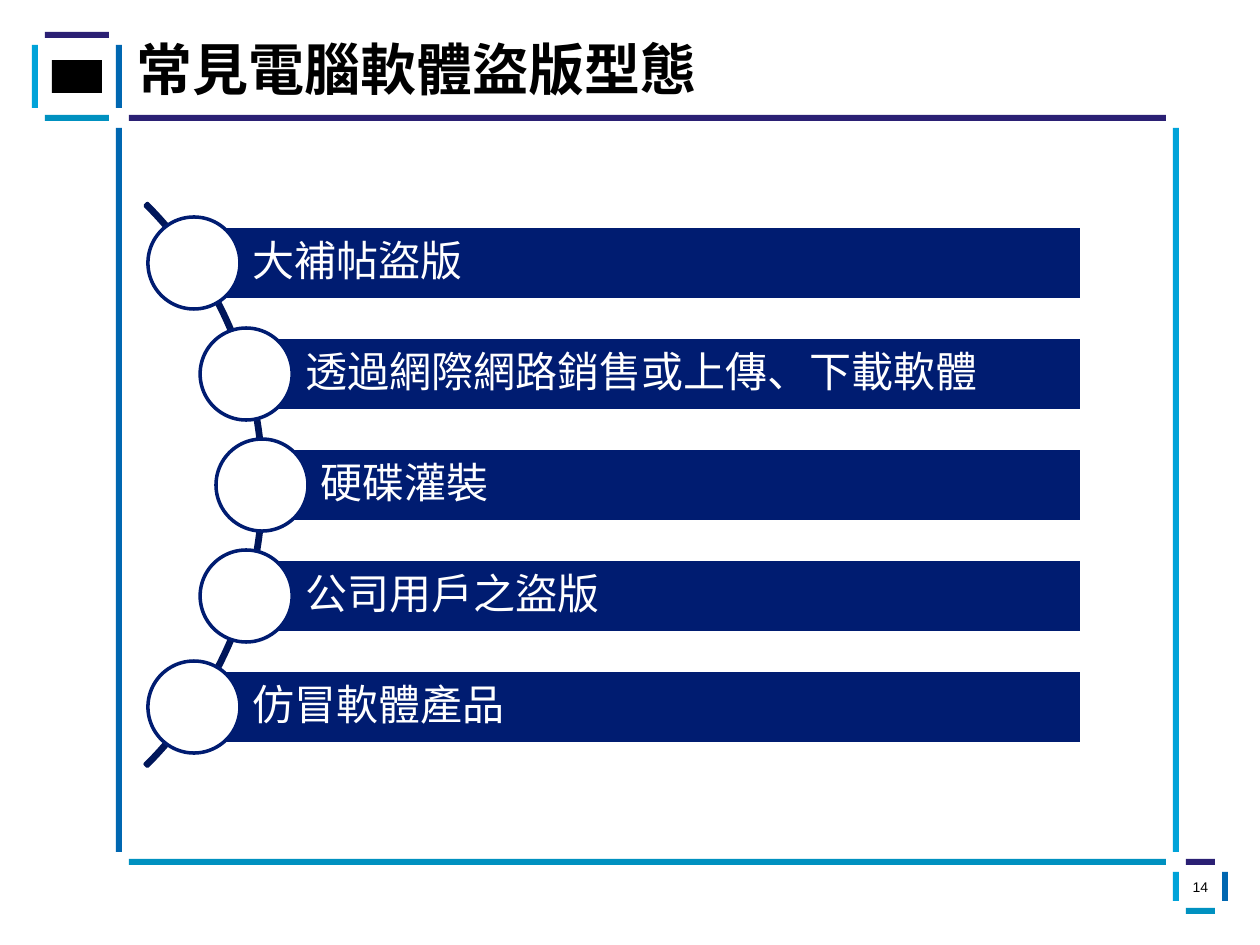
from math import sqrt

from lxml import etree
from pptx import Presentation
from pptx.dml.color import RGBColor
from pptx.enum.shapes import MSO_SHAPE
from pptx.enum.text import MSO_ANCHOR, PP_ALIGN
from pptx.oxml.ns import qn
from pptx.util import Pt

RECT, OVAL, BLOCK_ARC = MSO_SHAPE.RECTANGLE, MSO_SHAPE.OVAL, MSO_SHAPE.BLOCK_ARC
TOP, MIDDLE = MSO_ANCHOR.TOP, MSO_ANCHOR.MIDDLE
LEFT, CENTER = PP_ALIGN.LEFT, PP_ALIGN.CENTER
PX = 914400 / 126
CJK = "Noto Sans CJK SC"
COLORS = {
    "purple": "2B2074", "blue": "0067B1", "teal": "0091C0", "cyan": "00A3D9",
    "navy": "001C71", "arc": "00165A", "white": "FFFFFF", "black": "000000",
}
ITEMS = ["大補帖盜版", "透過網際網路銷售或上傳、下載軟體", "硬碟灌裝",
         "公司用戶之盜版", "仿冒軟體產品"]


def px(n):
    """Turn px into EMU."""
    return round(n * PX)


def rgb(name):
    """Look up a named colour."""
    return RGBColor.from_string(COLORS[name])


def add_shape(s, kind, box, fill, line=None):
    """Add a flat preset shape with an optional 2 pt outline."""
    sp = s.shapes.add_shape(kind, *map(px, box))
    sp.shadow.inherit = False
    sp.fill.solid()
    sp.fill.fore_color.rgb = rgb(fill)
    if line:
        sp.line.color.rgb = rgb(line)
        sp.line.width = Pt(2)
    else:
        sp.line.fill.background()
    return sp


def write(sp, text, size, color, font=CJK, bold=False, align=LEFT,
          anchor=MIDDLE, insets=(0, 0, 0, 0), spacing=0.9):
    """Write one formatted paragraph into a shape."""
    tf = sp.text_frame
    tf.text = text
    tf.word_wrap = True
    tf.vertical_anchor = anchor
    tf.margin_left, tf.margin_top, tf.margin_right, tf.margin_bottom = map(px, insets)
    p = tf.paragraphs[0]
    p.alignment = align
    p.line_spacing = spacing
    r = p.runs[0]
    r.font.size, r.font.bold, r.font.name = Pt(size), bold, font
    r.font.color.rgb = rgb(color)
    etree.SubElement(r.font._element, qn("a:ea")).set("typeface", font)


def add_frame(s, box, top, right, bottom, left):
    """Draw four bars round a box, with open corners."""
    x, y, w, h = box
    bar, inset = 6, 13
    across, down = w - 2 * inset, h - 2 * inset
    add_shape(s, RECT, (x + inset, y, across, bar), top)
    add_shape(s, RECT, (x + w - bar, y + inset, bar, down), right)
    add_shape(s, RECT, (x + inset, y + h - bar, across, bar), bottom)
    add_shape(s, RECT, (x, y + inset, bar, down), left)


def add_logo(s, box):
    """Draw the framed emblem as one plain block."""
    x, y, w, h = box
    add_frame(s, box, "purple", "blue", "teal", "cyan")
    add_shape(s, RECT, (x + 20, y + 28, w - 40, h - 56), "black")


def add_title(s, box, text):
    """Place the slide title in its placeholder."""
    sp = s.shapes.title
    sp.left, sp.top, sp.width, sp.height = map(px, box)
    write(sp, text, 32, "black", bold=True, anchor=TOP)


def add_curved_list(s, box, items):
    """Place labelled bars whose circles follow an arc at the left of the box."""
    x, y, w, h = box
    bar_h, dot, radius = 74, 92, 396
    pitch = (h - dot) / (len(items) - 1)
    cx, cy = x - 280, y + h / 2
    arc = add_shape(s, BLOCK_ARC, (cx - 398, cy - 398, 796, 796), "arc", "arc")
    for i, value in enumerate((189, 27, 0.004)):
        arc.adjustments[i] = value
    for i, item in enumerate(items):
        offset = (i - (len(items) - 1) / 2) * pitch
        left, mid = cx + sqrt(radius ** 2 - offset ** 2), cy + offset
        bar = add_shape(s, RECT, (left, mid - bar_h / 2, x + w - left, bar_h),
                        "navy", "white")
        write(bar, item, 24, "white", insets=(59, 9, 9, 9))
        add_shape(s, OVAL, (left - dot / 2, mid - dot / 2, dot, dot), "white", "navy")


def add_page_number(s, box, number):
    """Draw the framed page number."""
    x, y, w, h = box
    add_frame(s, box, "purple", "blue", "teal", "cyan")
    sp = s.shapes.add_textbox(*map(px, (x + 6, y + 6, w - 12, h - 12)))
    write(sp, number, 8, "black", font="Arial", align=CENTER, spacing=1.0)


def main():
    """Build and save the slide."""
    prs = Presentation()
    prs.slide_width, prs.slide_height = px(1260), px(945)
    s = prs.slides.add_slide(prs.slide_layouts[5])
    add_logo(s, (32, 32, 90, 89))
    add_frame(s, (116, 115, 1063, 750), "purple", "cyan", "teal", "blue")
    add_title(s, (136, 42, 1134, 97), "常見電腦軟體盜版型態")
    add_curved_list(s, (146, 217, 936, 536), ITEMS)
    add_page_number(s, (1173, 859, 55, 55), "14")
    prs.save("out.pptx")


if __name__ == "__main__":
    main()
